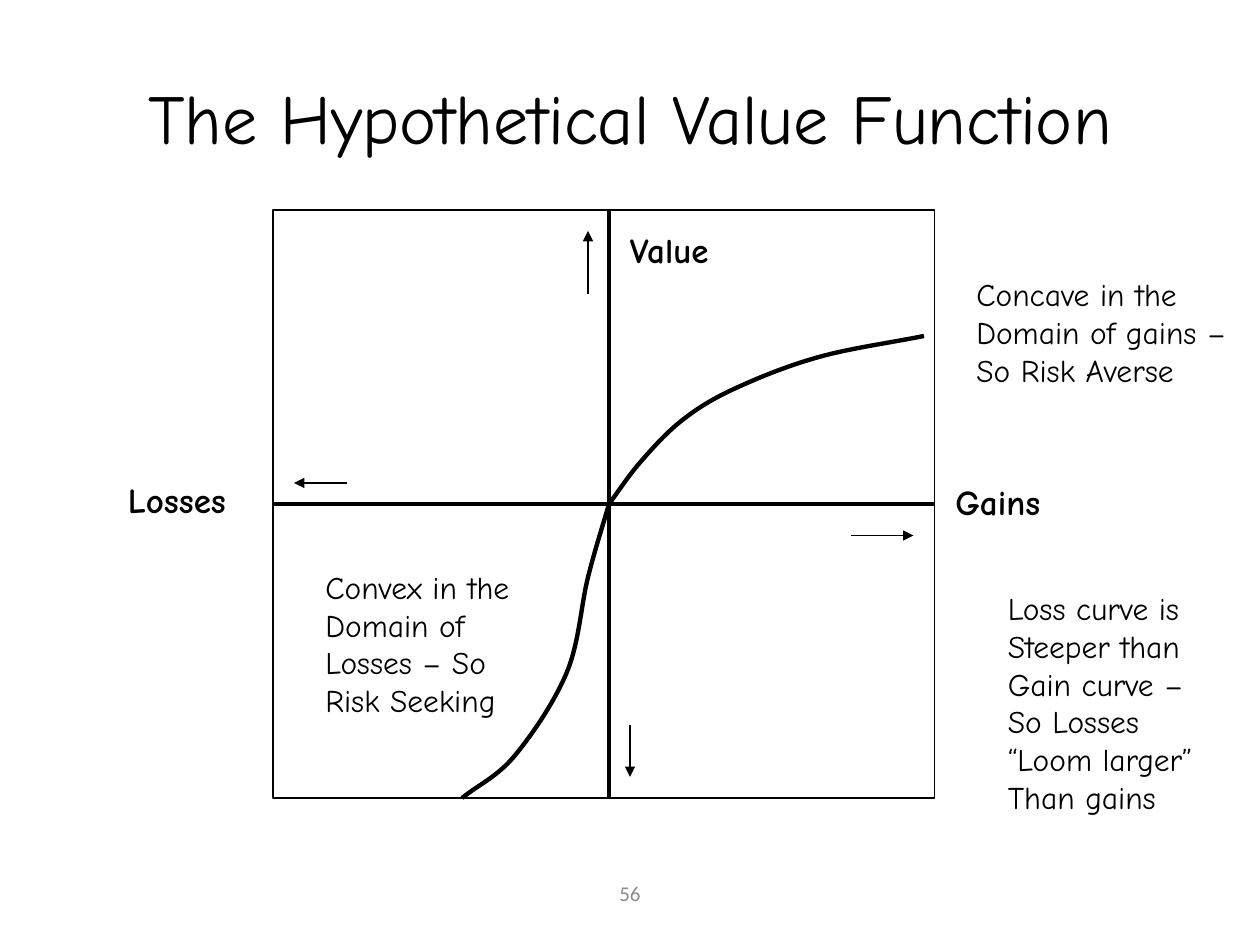
from lxml import etree
from pptx import Presentation, util as u
from pptx.dml.color import RGBColor
from pptx.enum import shapes, text
from pptx.oxml.ns import qn

COLORS = {"ink": "000000", "paper": "FFFFFF", "muted": "8C8C8C"}
HAND, PLAIN = "Comic Neue", "Calibri"
CELL = u.Inches(10) // 120  # the slide is a grid of 120 columns by 90 rows

LEFT, TOP, RIGHT, BOTTOM = 26, 20, 89, 76
ORIGIN = ZERO_X, ZERO_Y = 58, 48


def grid(*cells):
    return [round(cell * CELL) for cell in cells]


def color(name):
    return RGBColor.from_string(COLORS[name])


class ValueSlide:
    """Holds the current slide and draws on it in grid cells."""

    def __init__(self, deck):
        self.slide = deck.slides.add_slide(deck.slide_layouts[6])
        self.shapes = self.slide.shapes

    def stroke(self, shape, width):
        shape.line.color.rgb = color("ink")
        shape.line.width = u.Pt(width)

    def label(self, lines, box, size=18, bold=False, font=HAND, ink="ink",
              centered=False, wrap=False):
        frame = self.shapes.add_textbox(*grid(*box)).text_frame
        frame.text = "\n".join(lines)
        frame.word_wrap = wrap
        if centered:
            frame.vertical_anchor = text.MSO_ANCHOR.MIDDLE
        for paragraph in frame.paragraphs:
            paragraph.alignment = text.PP_ALIGN.CENTER if centered else text.PP_ALIGN.LEFT
            for run in paragraph.runs:
                run.font.name, run.font.size, run.font.bold = font, u.Pt(size), bold
                run.font.color.rgb = color(ink)

    def frame(self, left, top, right, bottom):
        plot = self.shapes.add_shape(shapes.MSO_SHAPE.RECTANGLE,
                                     *grid(left, top, right - left, bottom - top))
        plot.shadow.inherit = False
        plot.fill.solid()
        plot.fill.fore_color.rgb = color("paper")
        self.stroke(plot, 0.75)

    def line(self, start, end, width, arrow=False):
        line = self.shapes.add_connector(shapes.MSO_CONNECTOR.STRAIGHT, *grid(*start, *end))
        self.stroke(line, width)
        if arrow:
            etree.SubElement(line.line._get_or_add_ln(), qn("a:tailEnd"), type="triangle")
        etree.SubElement(line._element.spPr, qn("a:effectLst"))

    def curve(self, knots):
        """Draw a smooth Catmull-Rom curve through the knots."""
        points = [grid(*knot) for knot in knots]
        builder = self.shapes.build_freeform(*points[0])
        builder.add_line_segments(points[1:], close=False)
        curve = builder.convert_to_shape()
        curve.shadow.inherit = False
        curve.fill.background()
        self.stroke(curve, 2.5)

        def mirrored(end, inner):
            return [2 * a - b for a, b in zip(end, inner)]

        padded = [mirrored(points[0], points[1]), *points, mirrored(points[-1], points[-2])]
        segments = list(curve._element.iter(qn("a:lnTo")))
        for segment, before, start, end, after in zip(
                segments, padded, padded[1:], padded[2:], padded[3:]):
            segment.tag = qn("a:cubicBezTo")
            leaving = [s + (e - b) / 6 for b, s, e in zip(before, start, end)]
            arriving = [e - (a - s) / 6 for s, e, a in zip(start, end, after)]
            for position, (x, y) in enumerate((leaving, arriving)):
                control = etree.Element(qn("a:pt"), x=str(round(x - curve.left)),
                                        y=str(round(y - curve.top)))
                segment.insert(position, control)


def main():
    deck = Presentation()
    deck.slide_width, deck.slide_height = grid(120, 90)
    page = ValueSlide(deck)

    page.label(["The Hypothetical Value Function"], (6, 3.6, 108, 15), size=40,
               centered=True, wrap=True)
    page.label(["56"], (41, 82, 38, 6.2), size=12, font=PLAIN, ink="muted",
               centered=True, wrap=True)

    page.frame(LEFT, TOP, RIGHT, BOTTOM)
    page.line((ZERO_X, TOP), (ZERO_X, BOTTOM), 2.25)
    page.line((LEFT, ZERO_Y), (RIGHT, ZERO_Y), 2.25)
    page.curve([ORIGIN, (61, 44), (65, 40), (70, 37), (78, 34), (88, 32)])
    page.curve([ORIGIN, (56, 55), (54, 64), (49, 72), (44, 76)])

    for name, box in {
        "Value": (58.8, 21.2, 11, 5.2),
        "Gains": (89.8, 45.2, 10.8, 5.2),
        "Losses": (11, 45, 14, 5.2),
    }.items():
        page.label([name], box, size=20, bold=True, wrap=True)

    page.label(["Concave in the", "Domain of gains –", "So Risk Averse"],
               (91.8, 25.6, 26.5, 12))
    page.label(["Convex in the", "Domain of", "Losses – So", "Risk Seeking"],
               (29.8, 53.5, 21.2, 15.6))
    page.label(["Loss curve is", "Steeper than", "Gain curve –", "So Losses",
                "“Loom larger”", "Than gains"], (94.8, 55.5, 21.2, 22.8))

    for start, end in [((81, 51), (87, 51)), ((56, 28), (56, 22)),
                       ((33, 46), (28, 46)), ((60, 69), (60, 74))]:
        page.line(start, end, 0.75, arrow=True)

    deck.save("out.pptx")


if __name__ == "__main__":
    main()
